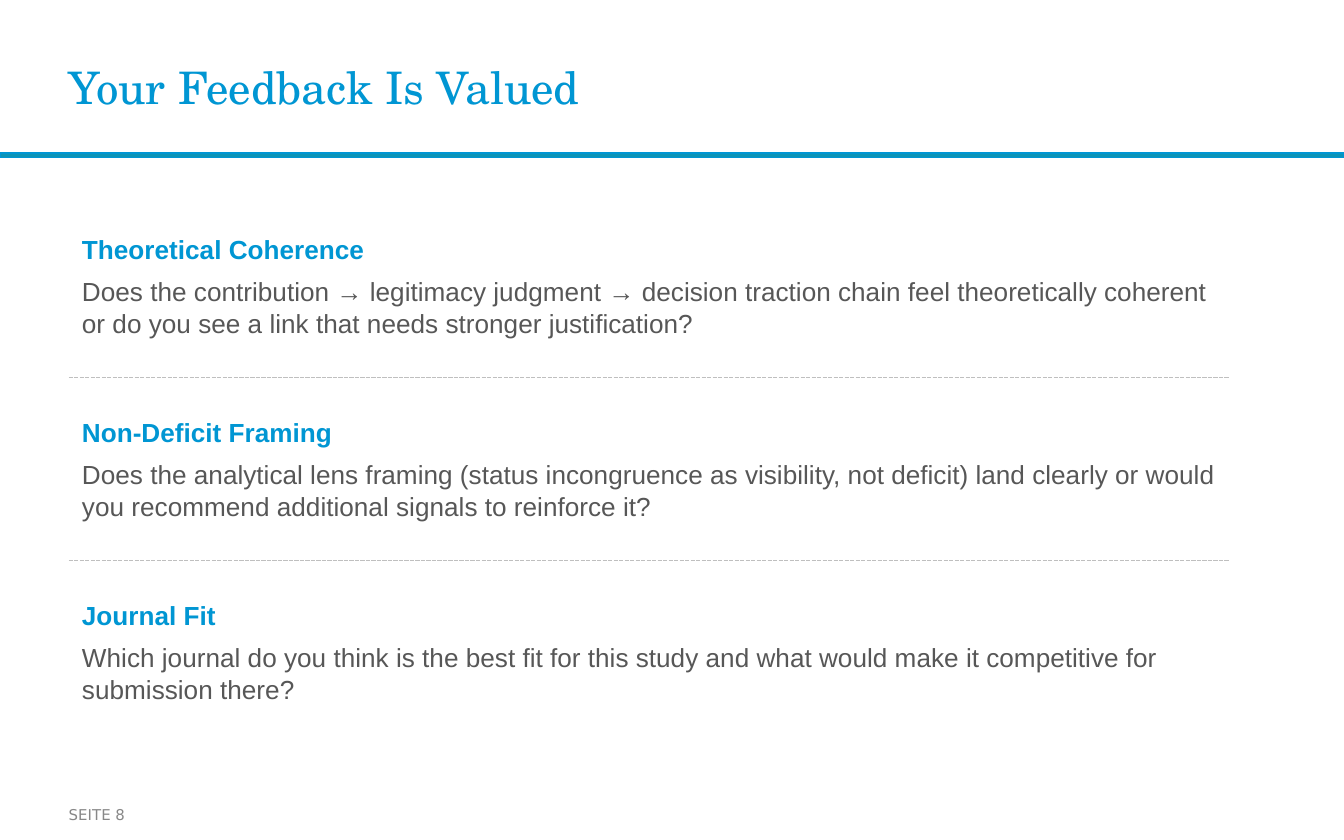
from lxml import etree
from pptx import Presentation
from pptx.dml.color import RGBColor
from pptx.enum.dml import MSO_LINE
from pptx.enum.shapes import MSO_CONNECTOR, MSO_SHAPE
from pptx.enum.text import MSO_ANCHOR, MSO_AUTO_SIZE
from pptx.oxml.ns import qn
from pptx.util import Cm, Pt

RECTANGLE = MSO_SHAPE.RECTANGLE
STRAIGHT = MSO_CONNECTOR.STRAIGHT
MIDDLE = MSO_ANCHOR.MIDDLE
FIT_SHAPE = MSO_AUTO_SIZE.SHAPE_TO_FIT_TEXT
DASH = MSO_LINE.SQUARE_DOT  # stored as sysDash

BLUE = RGBColor(0x00, 0x96, 0xD3)
TEAL = RGBColor(0x0C, 0x94, 0xB7)
DARK_GREY = RGBColor(0x57, 0x57, 0x57)
MID_GREY = RGBColor(0x88, 0x88, 0x88)
LIGHT_GREY = RGBColor(0xBF, 0xBF, 0xBF)

PAGE_WIDTH, PAGE_HEIGHT = 25.4, 15.88
LEFT = 1.3
CONTENT_WIDTH = 21.94
FIRST_TOP = 4.27
ROW_PITCH = 3.46
DIVIDER_OFFSET = 2.87

# Heading, question and box width
QUESTIONS = [
    ("Theoretical Coherence",
     "Does the contribution → legitimacy judgment → decision traction chain feel "
     "theoretically coherent or do you see a link that needs stronger justification?",
     CONTENT_WIDTH),
    ("Non-Deficit Framing",
     "Does the analytical lens framing (status incongruence as visibility, not deficit) "
     "land clearly or would you recommend additional signals to reinforce it?",
     CONTENT_WIDTH),
    ("Journal Fit",
     "Which journal do you think is the best fit for this study and what would make it "
     "competitive for submission there?",
     22.6),
]


class FeedbackSlide:
    """Holds the slide and its style; one method per kind of element."""

    title_font = "TeX Gyre Schola"
    body_font = "Arial"
    footer_font = "DejaVu Sans"

    def __init__(self, page):
        self.page = page

    def bar(self, top, height):
        bar = self.page.shapes.add_shape(
            RECTANGLE, Cm(0), Cm(top), Cm(PAGE_WIDTH), Cm(height))
        bar.shadow.inherit = False
        bar.fill.solid()
        bar.fill.fore_color.rgb = TEAL
        bar.line.color.rgb = BLUE
        bar.line.width = Pt(1)

    def frame(self, top, width, height):
        box = self.page.shapes.add_textbox(Cm(LEFT), Cm(top), Cm(width), Cm(height))
        box.text_frame.word_wrap = True
        box.text_frame.vertical_anchor = MIDDLE
        return box.text_frame

    def set_text(self, para, text, font, size, color, bold=False):
        para.text = text
        for span in para.runs:
            span.font.name = font
            span.font.size = Pt(size)
            span.font.color.rgb = color
            span.font.bold = bold

    def label(self, text, top, width, height, font, size, color, inset=0):
        frame = self.frame(top, width, height)
        frame.margin_left = frame.margin_right = Cm(0)
        frame.margin_top = frame.margin_bottom = Cm(inset)
        self.set_text(frame.paragraphs[0], text, font, size, color)

    def question(self, heading, text, top, width):
        frame = self.frame(top, width, 2.26)
        frame.auto_size = FIT_SHAPE
        heading_para, text_para = frame.paragraphs[0], frame.add_paragraph()
        self.set_text(heading_para, heading, self.body_font, 14, BLUE, bold=True)
        self.set_text(text_para, text, self.body_font, 14, DARK_GREY)
        for para in frame.paragraphs:
            para.space_after = Pt(6)

    def divider(self, top):
        line = self.page.shapes.add_connector(
            STRAIGHT, Cm(LEFT), Cm(top), Cm(LEFT + CONTENT_WIDTH), Cm(top))
        line.line.color.rgb = LIGHT_GREY
        line.line.width = Pt(0.75)
        line.line.dash_style = DASH
        etree.SubElement(line._element.spPr, qn("a:effectLst"))


def main():
    deck = Presentation()
    deck.slide_width, deck.slide_height = Cm(PAGE_WIDTH), Cm(PAGE_HEIGHT)
    slide = FeedbackSlide(deck.slides.add_slide(deck.slide_layouts[6]))

    # Header and footer
    slide.bar(2.9, 0.08)
    slide.label("SEITE 8", 15.04, 2.5, 0.7, slide.footer_font, 8, MID_GREY, inset=0.13)
    slide.label("Your Feedback Is Valued", 0.38, 19.9, 2.52, slide.title_font, 24, BLUE)

    # Questions with a divider between them
    for row, (heading, text, width) in enumerate(QUESTIONS):
        top = FIRST_TOP + row * ROW_PITCH
        slide.question(heading, text, top, width)
        if row < len(QUESTIONS) - 1:
            slide.divider(top + DIVIDER_OFFSET)

    deck.save("out.pptx")


if __name__ == "__main__":
    main()
